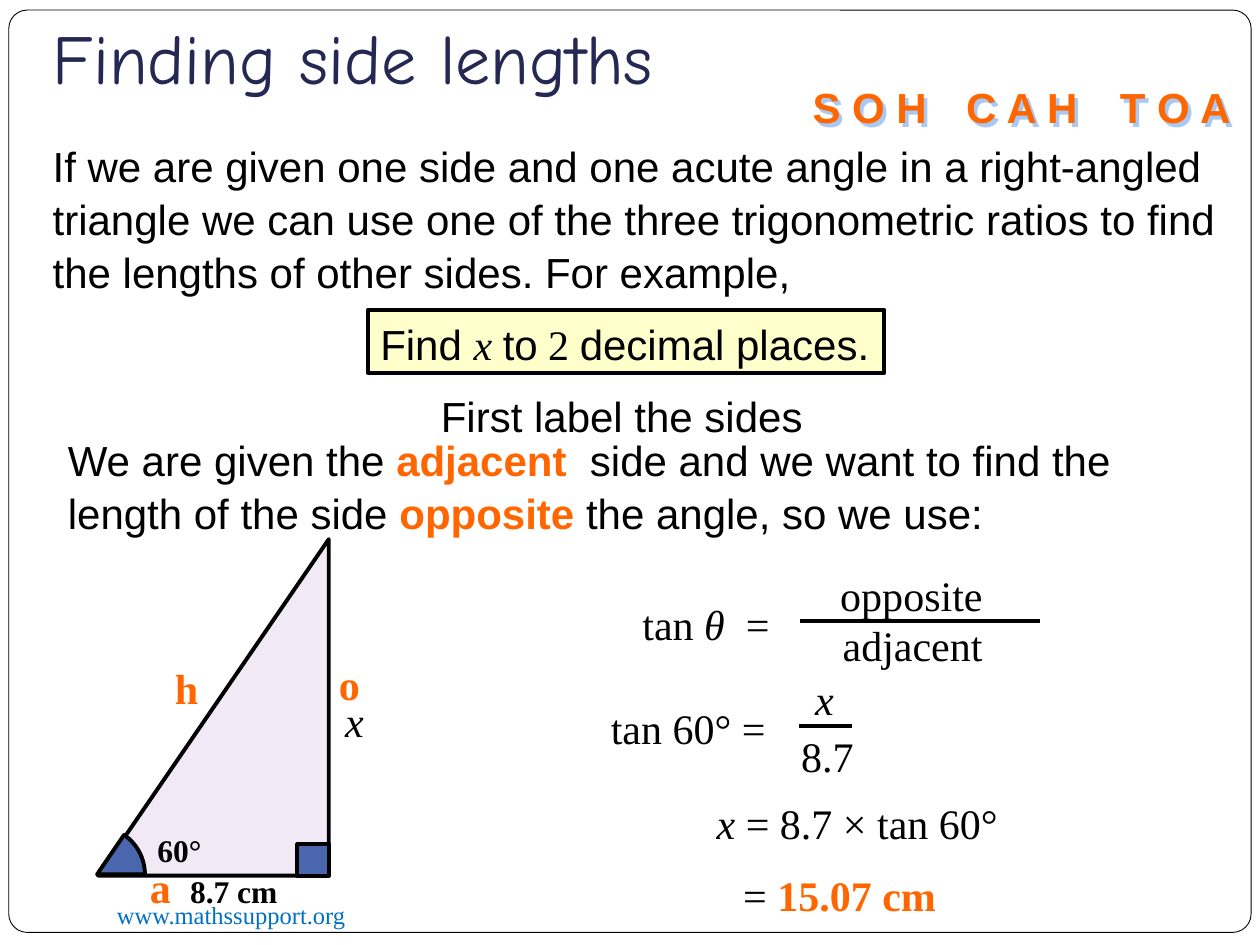
import math

from lxml import etree
from pptx import Presentation
from pptx.dml.color import RGBColor
from pptx.enum.shapes import MSO_CONNECTOR, MSO_SHAPE
from pptx.enum.text import MSO_ANCHOR, MSO_AUTO_SIZE, PP_ALIGN
from pptx.oxml import parse_xml
from pptx.oxml.ns import qn
from pptx.util import Pt

ROUNDED, RECT = MSO_SHAPE.ROUNDED_RECTANGLE, MSO_SHAPE.RECTANGLE
RIGHT_TRIANGLE = MSO_SHAPE.RIGHT_TRIANGLE
STRAIGHT = MSO_CONNECTOR.STRAIGHT
LEFT, TOP, BOTTOM = PP_ALIGN.LEFT, MSO_ANCHOR.TOP, MSO_ANCHOR.BOTTOM
FIT_SHAPE, NO_FIT = MSO_AUTO_SIZE.SHAPE_TO_FIT_TEXT, MSO_AUTO_SIZE.NONE
PX = 9144  # 100 px to the inch
SANS, SERIF, HAND = "Arial", "Times New Roman", "Comic Neue"
BLACK, ORANGE, BLUE = "000000", "FF6600", "4A66AC"
SHADOW = ('<a:effectLst xmlns:a="http://schemas.openxmlformats.org/drawingml/2006/main">'
          '<a:outerShdw dist="36000" dir="2700000" algn="ctr" rotWithShape="0">'
          '<a:srgbClr val="A9C9F5"/></a:outerShdw></a:effectLst>')


def paint(shape, fill, weight=2.25):
    shape.shadow.inherit = False
    shape.fill.solid()
    shape.fill.fore_color.rgb = RGBColor.from_string(fill)
    shape.line.color.rgb = RGBColor.from_string(BLACK)
    shape.line.width = Pt(weight)


def write(shape, runs, wrap=False, **base):
    """Fill a shape with runs of (text, format changes)."""
    frame = shape.text_frame
    frame.word_wrap = wrap
    frame.auto_size = FIT_SHAPE
    frame.vertical_anchor = TOP
    paragraph = frame.paragraphs[0]
    paragraph.alignment = LEFT
    paragraph.line_spacing = 1.05
    for text, changes in runs:
        run = paragraph.add_run()
        run.text = text
        style = {"name": SERIF, "size": 24, "color": BLACK, **base, **changes}
        run.font.color.rgb = RGBColor.from_string(style.pop("color"))
        style["size"] = Pt(style["size"])
        for key, value in style.items():
            setattr(run.font, key, value)


prs = Presentation()
prs.slide_width, prs.slide_height = 1000 * PX, 750 * PX
slide = prs.slides.add_slide(prs.slide_layouts[5])
shapes = slide.shapes

# Page frame, behind the title
page = shapes.add_shape(ROUNDED, 7 * PX, 8 * PX, 986 * PX, 732 * PX)
page.adjustments[0] = 0.02
paint(page, "FFFFFF", 0.5)
shapes._spTree.insert(2, page._element)

# Title
title = shapes.title
title.left, title.top, title.width, title.height = (n * PX for n in (32, 21, 850, 67))
title.text = "Finding side lengths"
heading = title.text_frame
layout = {"vertical_anchor": BOTTOM, "auto_size": NO_FIT, "margin_left": 10 * PX,
          "margin_top": 5 * PX, "margin_right": 10 * PX, "margin_bottom": 10 * PX}
for key, value in layout.items():
    setattr(heading, key, value)
heading.paragraphs[0].alignment = LEFT
title_font = heading.paragraphs[0].runs[0].font
title_font.name, title_font.size = HAND, Pt(40)
title_font.color.rgb = RGBColor.from_string("242852")

# Triangle with its two angle marks
triangle = shapes.add_shape(RIGHT_TRIANGLE, 78 * PX, 428 * PX, 183 * PX, 267 * PX)
triangle._element.spPr.find(qn("a:xfrm")).set("flipH", "1")
paint(triangle, "F1EAF6")

corner_x, corner_y, radius, steps = 77, 694, 38, 16
angle = math.atan2(267, 183)
arc = [(round((corner_x + radius * math.cos(angle * i / steps)) * PX),
        round((corner_y - radius * math.sin(angle * i / steps)) * PX))
       for i in range(steps + 1)]
builder = shapes.build_freeform(corner_x * PX, corner_y * PX)
builder.add_line_segments(arc, close=True)
paint(builder.convert_to_shape(), BLUE)
paint(shapes.add_shape(RECT, 236 * PX, 670 * PX, 25 * PX, 25 * PX), BLUE)

# Question box
question = shapes.add_shape(RECT, 292 * PX, 246 * PX, 410 * PX, 50 * PX)
paint(question, "FFFFCC")
write(question, [("Find ", {}), ("x ", {"name": SERIF, "italic": True}), ("to", {}),
                 (" 2 ", {"name": SERIF}), ("decimal places.", {})], name=SANS)

# Wrapped sans-serif paragraphs
key_word = {"color": ORANGE, "bold": True}
paragraphs = [
    ((32, 105, 943, 131), [(
        "If we are given one side and one acute angle in a right-angled triangle "
        "we can use one of the three trigonometric ratios to find the lengths of "
        "other sides. For example,", {})]),
    ((340, 303, 342, 50), [("First label the sides", {})]),
    ((44, 338, 918, 91), [
        ("We are given the ", {}), ("adjacent", key_word),
        ("  side and we want to find the length of the side ", {}),
        ("opposite", key_word), (" the angle, so we use:", {})]),
]
for place, runs in paragraphs:
    write(shapes.add_textbox(*(n * PX for n in place)), runs, wrap=True, name=SANS)

# Triangle labels, working and web address
italic, measure = {"italic": True}, {"size": 18, "bold": True}
labels = [
    ((115, 653, 58, 40), [("60°", measure)]),
    ((141, 686, 99, 40), [("8.7 cm", measure)]),
    ((264, 545, 35, 50), [("x", italic)]),
    ((129, 519, 41, 50), [("h", key_word)]),
    ((109, 677, 39, 50), [("a", key_word)]),
    ((259, 516, 38, 50), [("o", key_word)]),
    ((500, 468, 131, 51), [("tan ", {}), ("θ  ", italic), ("=", {})]),
    ((657, 445, 152, 51), [("opposite", {})]),
    ((659, 485, 157, 51), [("adjacent", {})]),
    ((475, 551, 163, 51), [("tan 60° =", {})]),
    ((637, 528, 35, 50), [("x", italic)]),
    ((626, 573, 70, 51), [("8.7", {})]),
    ((559, 626, 273, 50), [("x", italic), (" = 8.7 × tan 60°", {})]),
    ((580, 683, 207, 50), [("=", {}), (" 15.07 cm", key_word)]),
    ((83, 708, 325, 34), [("www.mathssupport.org", {"size": 14, "color": "0070C0"})]),
]
for place, runs in labels:
    write(shapes.add_textbox(*(n * PX for n in place)), runs)

# Fraction bars
for start, end, y in ((635, 825, 493), (634, 676, 576)):
    bar = shapes.add_connector(STRAIGHT, start * PX, y * PX, end * PX, y * PX)
    bar.line.color.rgb = RGBColor.from_string(BLACK)
    bar.line.width = Pt(2.25)
    etree.SubElement(bar._element.spPr, qn("a:effectLst"))

# Shadowed mnemonic
for i, ratio in enumerate(("S O H", "C A H", "T O A")):
    mnemonic = shapes.add_textbox((635 + 122 * i) * PX, 58 * PX, 111 * PX, 50 * PX)
    write(mnemonic, [(ratio, key_word)], name=SANS)
    mnemonic._element.spPr.append(parse_xml(SHADOW))

prs.save("out.pptx")
